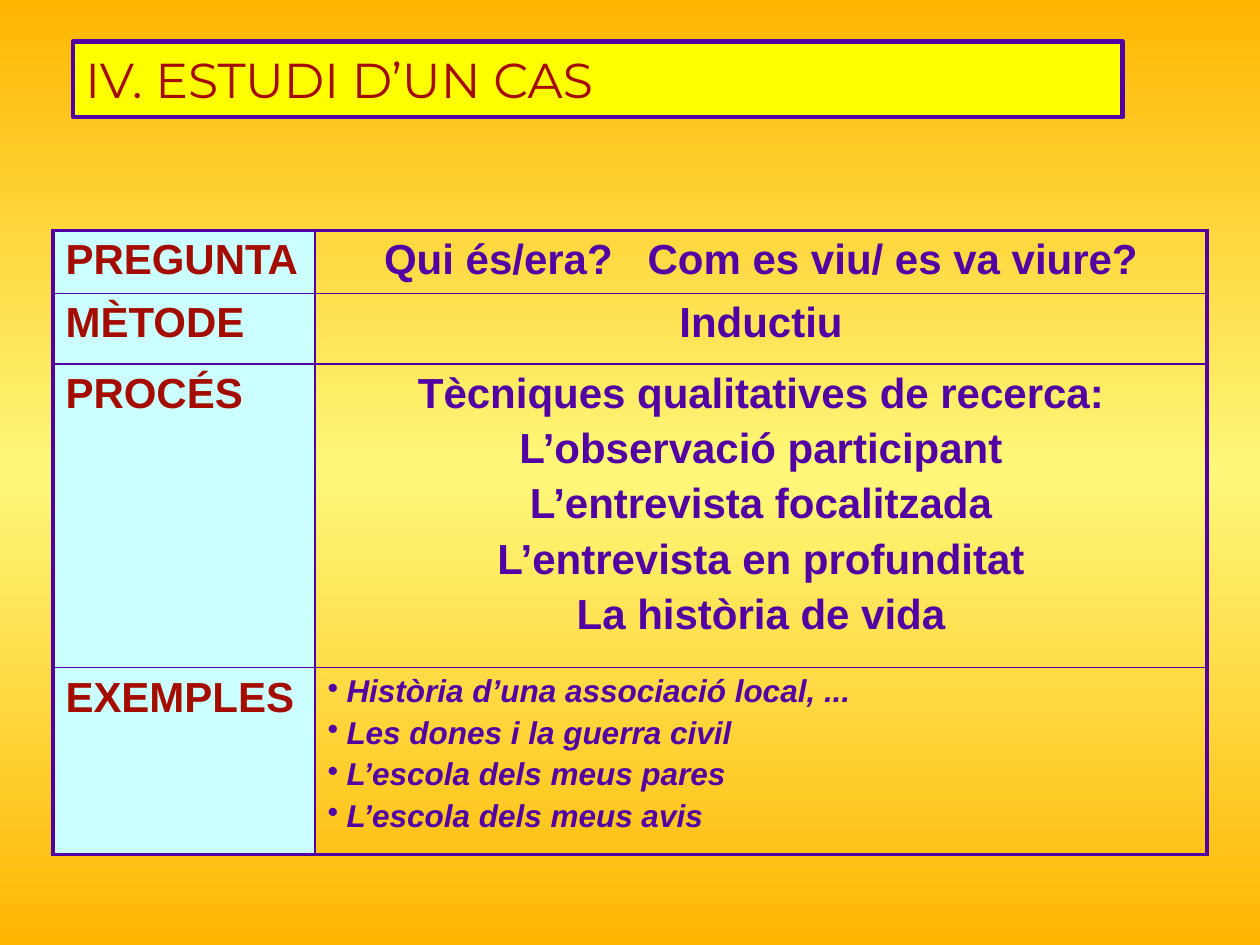
from copy import deepcopy

from lxml import etree
from pptx import Presentation
from pptx import util as u
from pptx.dml.color import RGBColor
from pptx.enum import shapes, text
from pptx.oxml.ns import qn

PURPLE = RGBColor(0x52, 0x00, 0xA4)
RED = RGBColor(0xA4, 0x0C, 0x00)
YELLOW = RGBColor(0xFF, 0xFF, 0x00)
ICE = RGBColor(0xCC, 0xFF, 0xFF)
ORANGE = RGBColor(0xFF, 0xB6, 0x01)
LEMON = RGBColor(0xFE, 0xF8, 0x7A)

TITLE = "IV. ESTUDI D’UN CAS"
ROWS = [
    ("PREGUNTA", ["Qui és/era?   Com es viu/ es va viure?"]),
    ("MÈTODE", ["Inductiu"]),
    ("PROCÉS", [
        "Tècniques qualitatives de recerca:",
        "L’observació participant",
        "L’entrevista focalitzada",
        "L’entrevista en profunditat",
        "La història de vida",
    ]),
    ("EXEMPLES", [
        "Història d’una associació local, ...",
        "Les dones i la guerra civil",
        "L’escola dels meus pares",
        "L’escola dels meus avis",
    ]),
]
BULLETED = "EXEMPLES"
COLUMN_WIDTHS = [2.08, 7.08]
ROW_HEIGHTS = [0.5, 0.56, 2.41, 1.48]
TABLE_LEFT, TABLE_TOP = 0.42, 1.83
BACKGROUND_STOPS = [(0, ORANGE), (0.5, LEMON), (1, ORANGE)]
OUTER, INNER = 2.25, 1


def paint_background(slide):
    fill = slide.background.fill
    fill.gradient()
    fill.gradient_angle = 270
    stop_list = slide.element.find(".//" + qn("a:gsLst"))
    stop_list.append(deepcopy(stop_list[0]))
    for stop, (position, color) in zip(fill.gradient_stops, BACKGROUND_STOPS):
        stop.position = position
        stop.color.rgb = color


def add_title(slide):
    box = slide.shapes.add_shape(
        shapes.MSO_SHAPE.RECTANGLE,
        u.Inches(0.58), u.Inches(0.33), u.Inches(8.33), u.Inches(0.6))
    box.shadow.inherit = False
    box.fill.solid()
    box.fill.fore_color.rgb = YELLOW
    box.line.color.rgb = PURPLE
    box.line.width = u.Pt(2.5)
    paragraph = box.text_frame.paragraphs[0]
    paragraph.text = TITLE
    paragraph.alignment = text.PP_ALIGN.LEFT
    paragraph.font.name = "Montserrat"
    paragraph.font.size = u.Pt(28)
    paragraph.font.color.rgb = RED


def set_borders(cell, widths):
    properties = cell._tc.get_or_add_tcPr()
    for index, (side, width) in enumerate(widths.items()):
        line = etree.Element(qn("a:ln" + side), w=str(u.Pt(width)))
        color = etree.SubElement(etree.SubElement(line, qn("a:solidFill")), qn("a:srgbClr"))
        color.set("val", str(PURPLE))
        properties.insert(index, line)


def add_bullet(paragraph):
    properties = paragraph._p.get_or_add_pPr()
    indent = u.Inches(0.15)
    properties.set("marL", str(indent))
    properties.set("indent", str(-indent))
    etree.SubElement(properties, qn("a:buChar"), char="•")


def write_cell(cell, lines, color, alignment, size=24, bulleted=False):
    cell.text_frame.text = "\n".join(lines)
    for index, paragraph in enumerate(cell.text_frame.paragraphs):
        paragraph.alignment = alignment
        if index:
            paragraph.space_before = u.Pt(size * 0.2)
        if bulleted:
            add_bullet(paragraph)
        font = paragraph.font
        font.name = "Arial"
        font.size = u.Pt(size)
        font.bold = True
        font.italic = bulleted
        font.color.rgb = color


def add_case_table(slide):
    table = slide.shapes.add_table(
        len(ROWS), len(COLUMN_WIDTHS), u.Inches(TABLE_LEFT), u.Inches(TABLE_TOP),
        u.Inches(sum(COLUMN_WIDTHS)), u.Inches(sum(ROW_HEIGHTS))).table
    table.first_row = table.horz_banding = False
    for column, width in zip(table.columns, COLUMN_WIDTHS):
        column.width = u.Inches(width)
    for index, (heading, lines) in enumerate(ROWS):
        table.rows[index].height = u.Inches(ROW_HEIGHTS[index])
        label, detail = table.cell(index, 0), table.cell(index, 1)
        label.fill.solid()
        label.fill.fore_color.rgb = ICE
        detail.fill.background()
        write_cell(label, [heading], RED, text.PP_ALIGN.LEFT)
        if heading == BULLETED:
            write_cell(detail, lines, PURPLE, text.PP_ALIGN.JUSTIFY, 18, True)
        else:
            write_cell(detail, lines, PURPLE, text.PP_ALIGN.CENTER)
        top = OUTER if index == 0 else INNER
        bottom = OUTER if index == len(ROWS) - 1 else INNER
        set_borders(label, {"L": OUTER, "R": INNER, "T": top, "B": bottom})
        set_borders(detail, {"L": INNER, "R": OUTER, "T": top, "B": bottom})


def main():
    presentation = Presentation()
    presentation.slide_width = u.Inches(10)
    presentation.slide_height = u.Inches(7.5)
    slide = presentation.slides.add_slide(presentation.slide_layouts[6])
    paint_background(slide)
    add_title(slide)
    add_case_table(slide)
    presentation.save("out.pptx")


if __name__ == "__main__":
    main()
